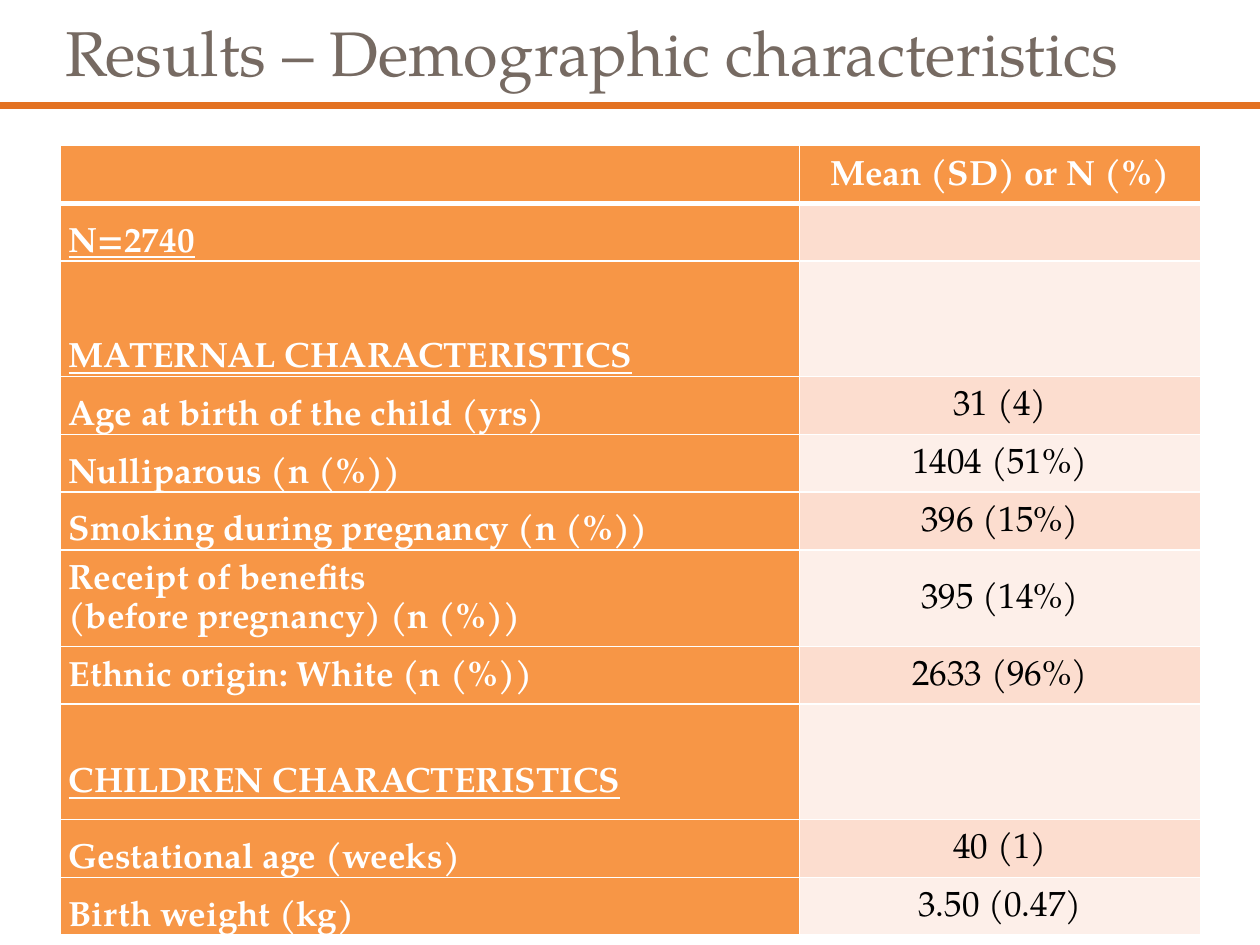
from dataclasses import dataclass

from lxml import etree
from pptx import Presentation
from pptx import util as u
from pptx.dml.color import RGBColor
from pptx.enum import shapes, text
from pptx.oxml.ns import qn

MID, BOT = text.MSO_ANCHOR.MIDDLE, text.MSO_ANCHOR.BOTTOM
LEFT, CENTER, JUST = text.PP_ALIGN.LEFT, text.PP_ALIGN.CENTER, text.PP_ALIGN.JUSTIFY


@dataclass(frozen=True)
class Theme:
    font: str = "TeX Gyre Pagella"
    title_size: float = 36
    body_size: float = 20
    title: str = "766A62"
    rule: str = "E37222"
    head: str = "F79646"
    bands: tuple = ("FCDDCF", "FDEFE9")
    white: str = "FFFFFF"
    black: str = "000000"


class Deck:
    """Holds the theme and the current slide, and adds elements to it."""

    def __init__(self, theme):
        self.t = theme
        self.prs = Presentation()
        self.prs.slide_width, self.prs.slide_height = u.Pt(720), u.Pt(540)
        self.s = self.prs.slides.add_slide(self.prs.slide_layouts[6])

    def run(self, p, words, size, color, bold=False, underline=False):
        r = p.add_run()
        r.text = words
        f = r.font
        f.name, f.size, f.bold, f.underline = self.t.font, u.Pt(size), bold, underline
        f.color.rgb = RGBColor.from_string(color)

    def title(self, words, x, y, w, h):
        tf = self.s.shapes.add_textbox(u.Pt(x), u.Pt(y), u.Pt(w), u.Pt(h)).text_frame
        tf.word_wrap, tf.vertical_anchor, tf.margin_left = True, MID, 0
        p = tf.paragraphs[0]
        p.alignment = CENTER
        self.run(p, words, self.t.title_size, self.t.title)

    def line(self, x1, y1, x2, y2, width):
        sp = self.s.shapes.add_connector(
            shapes.MSO_CONNECTOR.STRAIGHT, u.Pt(x1), u.Pt(y1), u.Pt(x2), u.Pt(y2))
        sp.line.color.rgb = RGBColor.from_string(self.t.rule)
        sp.line.width = u.Pt(width)
        etree.SubElement(sp._element.spPr, qn("a:effectLst"))

    def borders(self, cell, top, bottom):
        tcPr = cell._tc.get_or_add_tcPr()
        widths = {"lnL": 1, "lnR": 1, "lnT": top, "lnB": bottom}
        for i, (tag, width) in enumerate(widths.items()):
            ln = etree.Element(qn(f"a:{tag}"), w=str(u.Pt(width)))
            fill = etree.SubElement(ln, qn("a:solidFill"))
            etree.SubElement(fill, qn("a:srgbClr"), val=self.t.white)
            tcPr.insert(i, ln)

    def cell(self, cell, words, fill, color, anchor, align, bold, underline, top):
        cell.fill.solid()
        cell.fill.fore_color.rgb = RGBColor.from_string(fill)
        cell.vertical_anchor = anchor
        cell.margin_left = cell.margin_right = u.Pt(5)
        cell.margin_top, cell.margin_bottom = u.Pt(top), 0
        tf = cell.text_frame
        for i, line in enumerate(words.split("\n") if words else []):
            p = tf.add_paragraph() if i else tf.paragraphs[0]
            p.alignment, p.line_spacing = align, 1.15
            self.run(p, line, self.t.body_size, color, bold, underline)

    def table(self, rows, x, y, widths, unit):
        t = self.t
        tb = self.s.shapes.add_table(
            len(rows), len(widths), u.Pt(x), u.Pt(y), u.Pt(sum(widths)),
            u.Pt(unit * sum(row[2] for row in rows))).table
        tb.horz_banding = False
        for col, width in zip(tb.columns, widths):
            col.width = u.Pt(width)
        for i, (label, value, units, anchor, align, underline, top) in enumerate(rows):
            tb.rows[i].height = u.Pt(unit * units)
            a, b = tb.cell(i, 0), tb.cell(i, 1)
            self.cell(a, label, t.head, t.white, anchor, align, True, underline, top)
            fill, color = (t.bands[(i - 1) % 2], t.black) if i else (t.head, t.white)
            self.cell(b, value, fill, color, MID, CENTER, i == 0, False, 0)
            for c in (a, b):
                self.borders(c, 3 if i == 1 else 1, 3 if i == 0 else 1)


ROWS = [
    ("", "Mean (SD) or N (%)", 1, MID, LEFT, False, 0),
    ("N=2740", "", 1, BOT, JUST, True, 0),
    ("MATERNAL CHARACTERISTICS", "", 2, BOT, JUST, True, 0),
    ("Age at birth of the child (yrs)", "31 (4)", 1, BOT, JUST, False, 0),
    ("Nulliparous (n (%))", "1404 (51%)", 1, BOT, JUST, False, 0),
    ("Smoking during pregnancy (n (%))", "396 (15%)", 1, BOT, LEFT, False, 0),
    ("Receipt of benefits\n(before pregnancy) (n (%))", "395 (14%)", 1, MID, LEFT, False, 0),
    ("Ethnic origin: White (n (%))", "2633 (96%)", 1, MID, LEFT, False, 0),
    ("CHILDREN CHARACTERISTICS", "", 2, MID, LEFT, True, 23),
    ("Gestational age (weeks)", "40 (1)", 1, BOT, LEFT, False, 0),
    ("Birth weight (kg)", "3.50 (0.47)", 1, BOT, LEFT, False, 0),
]


def main():
    d = Deck(Theme())
    d.title("Results – Demographic characteristics", 7.2, 3.6, 668.9, 51.1)
    d.line(0, 60.3, 720, 60.3, 4.5)
    d.table(ROWS, 34.2, 83.2, (422.8, 229), 33)
    d.prs.save("out.pptx")


if __name__ == "__main__":
    main()
